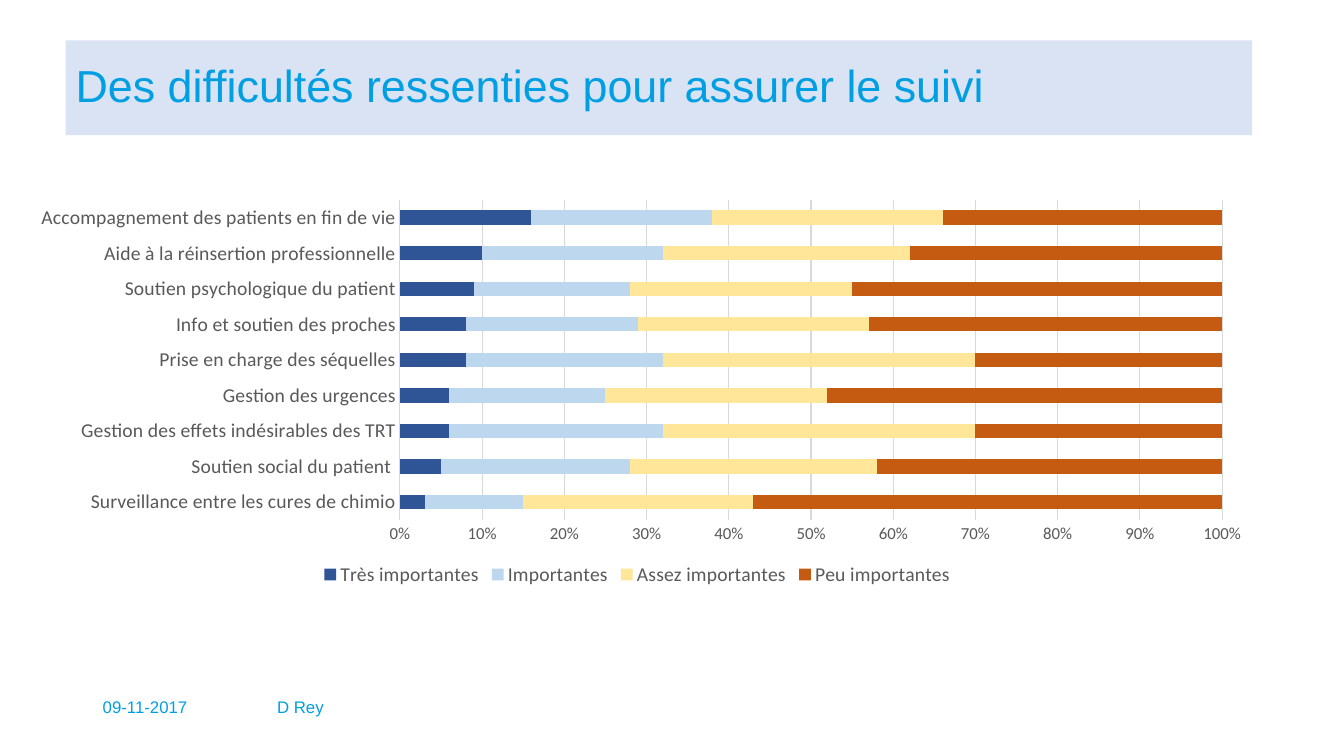
from pptx import Presentation
from pptx import util as u
from pptx.chart.data import CategoryChartData
from pptx.dml.color import RGBColor
from pptx.enum import chart as ch, text
from pptx.oxml import parse_xml
from pptx.oxml.ns import nsdecls

CYAN = RGBColor(0x00, 0x9F, 0xE3)
PALE_BLUE = RGBColor(0xDA, 0xE3, 0xF3)
GREY = RGBColor(0x59, 0x59, 0x59)
LIGHT_GREY = RGBColor(0xD9, 0xD9, 0xD9)

HARD_SPACE = chr(160)  # keeps each category label on one line
TASKS = [
    "Surveillance entre les cures de chimio",
    "Soutien social du patient ",
    "Gestion des effets indésirables des TRT",
    "Gestion des urgences",
    "Prise en charge des séquelles",
    "Info et soutien des proches",
    "Soutien psychologique du patient",
    "Aide à la réinsertion professionnelle",
    "Accompagnement des patients en fin de vie",
]
LEVELS = [
    ("Très importantes", RGBColor(0x2F, 0x55, 0x97), [3, 5, 6, 6, 8, 8, 9, 10, 16]),
    ("Importantes", RGBColor(0xBD, 0xD7, 0xEE), [12, 23, 26, 19, 24, 21, 19, 22, 22]),
    ("Assez importantes", RGBColor(0xFF, 0xE6, 0x99), [28, 30, 38, 27, 38, 28, 27, 30, 28]),
    ("Peu importantes", RGBColor(0xC5, 0x5A, 0x11), [57, 42, 30, 48, 30, 43, 45, 38, 34]),
]
PLOT_AREA = {"x": 0.309, "y": 0.021, "w": 0.662, "h": 0.802}


def set_values(target, **values):
    for name, value in values.items():
        setattr(target, name, value)


def set_font(font, size, color, name):
    set_values(font, size=u.Pt(size), name=name, bold=False)
    font.color.rgb = color


def write_line(shape, words, size):
    frame = shape.text_frame
    set_values(frame, text=words, word_wrap=True,
               auto_size=text.MSO_AUTO_SIZE.NONE,
               vertical_anchor=text.MSO_ANCHOR.MIDDLE)
    para = frame.paragraphs[0]
    set_values(para, alignment=text.PP_ALIGN.LEFT, line_spacing=0.9)
    set_font(para.runs[0].font, size, CYAN, "Arial")


def add_title(page, left, top, width, height):
    title = page.shapes.title
    set_values(title, left=left, top=top, width=width, height=height)
    title.fill.solid()
    title.fill.fore_color.rgb = PALE_BLUE
    write_line(title, "Des difficultés ressenties pour assurer le suivi", 32)


def add_footer(page, left, top, width, height):
    date_width, gap = u.Inches(1.58), u.Inches(0.15)
    author_left = left + date_width + gap
    for words, x, w in [("09-11-2017", left, date_width),
                        ("D Rey", author_left, left + width - author_left)]:
        write_line(page.shapes.add_textbox(x, top, w, height), words, 12)


def place_plot(chart):
    """Fix the inner plot area as fractions of the chart frame."""
    area = chart._chartSpace.chart.plotArea
    for old in area.xpath("c:layout"):
        area.remove(old)
    sizes = "".join(f'<c:{key} val="{value}"/>' for key, value in PLOT_AREA.items())
    area.insert(0, parse_xml(
        f'<c:layout {nsdecls("c")}><c:manualLayout><c:layoutTarget val="inner"/>'
        f'<c:xMode val="edge"/><c:yMode val="edge"/>{sizes}'
        '</c:manualLayout></c:layout>'))


def style_axes(chart):
    for axis, size in [(chart.category_axis, 14), (chart.value_axis, 12)]:
        set_values(axis, major_tick_mark=ch.XL_TICK_MARK.NONE,
                   minor_tick_mark=ch.XL_TICK_MARK.NONE)
        set_font(axis.tick_labels.font, size, GREY, "Calibri")
    scale = chart.value_axis
    set_values(scale, minimum_scale=0, maximum_scale=1, major_unit=0.1,
               has_major_gridlines=True)
    set_values(scale.tick_labels, number_format="0%", number_format_is_linked=False)
    scale.format.line.fill.background()
    for line in (chart.category_axis.format.line, scale.major_gridlines.format.line):
        line.color.rgb = LIGHT_GREY
        line.width = u.Pt(0.75)


def add_difficulty_chart(page, left, top, width, height):
    data = CategoryChartData()
    data.categories = [task.replace(" ", HARD_SPACE) for task in TASKS]
    for name, _, values in LEVELS:
        data.add_series(name, values)
    chart = page.shapes.add_chart(ch.XL_CHART_TYPE.BAR_STACKED_100,
                                  left, top, width, height, data).chart
    set_values(chart, has_title=False, has_legend=True)
    set_font(chart.font, 10, GREY, "Calibri")
    set_values(chart.legend, position=ch.XL_LEGEND_POSITION.BOTTOM,
               include_in_layout=False)
    set_font(chart.legend.font, 14, GREY, "Calibri")

    plot = chart.plots[0]
    set_values(plot, gap_width=150, overlap=100, vary_by_categories=False)
    for series, (_, color, _) in zip(plot.series, LEVELS):
        series.format.fill.solid()
        series.format.fill.fore_color.rgb = color
    style_axes(chart)
    place_plot(chart)


def main():
    deck = Presentation()
    set_values(deck, slide_width=u.Inches(13.33), slide_height=u.Inches(7.5))
    page = deck.slides.add_slide(deck.slide_layouts.get_by_name("Title Only"))
    for add_region, box in [(add_title, (0.65, 0.4, 11.77, 0.94)),
                            (add_footer, (0.92, 6.83, 4.37, 0.38)),
                            (add_difficulty_chart, (0.16, 1.9, 12.32, 3.96))]:
        add_region(page, *map(u.Inches, box))
    deck.save("out.pptx")


if __name__ == "__main__":
    main()
